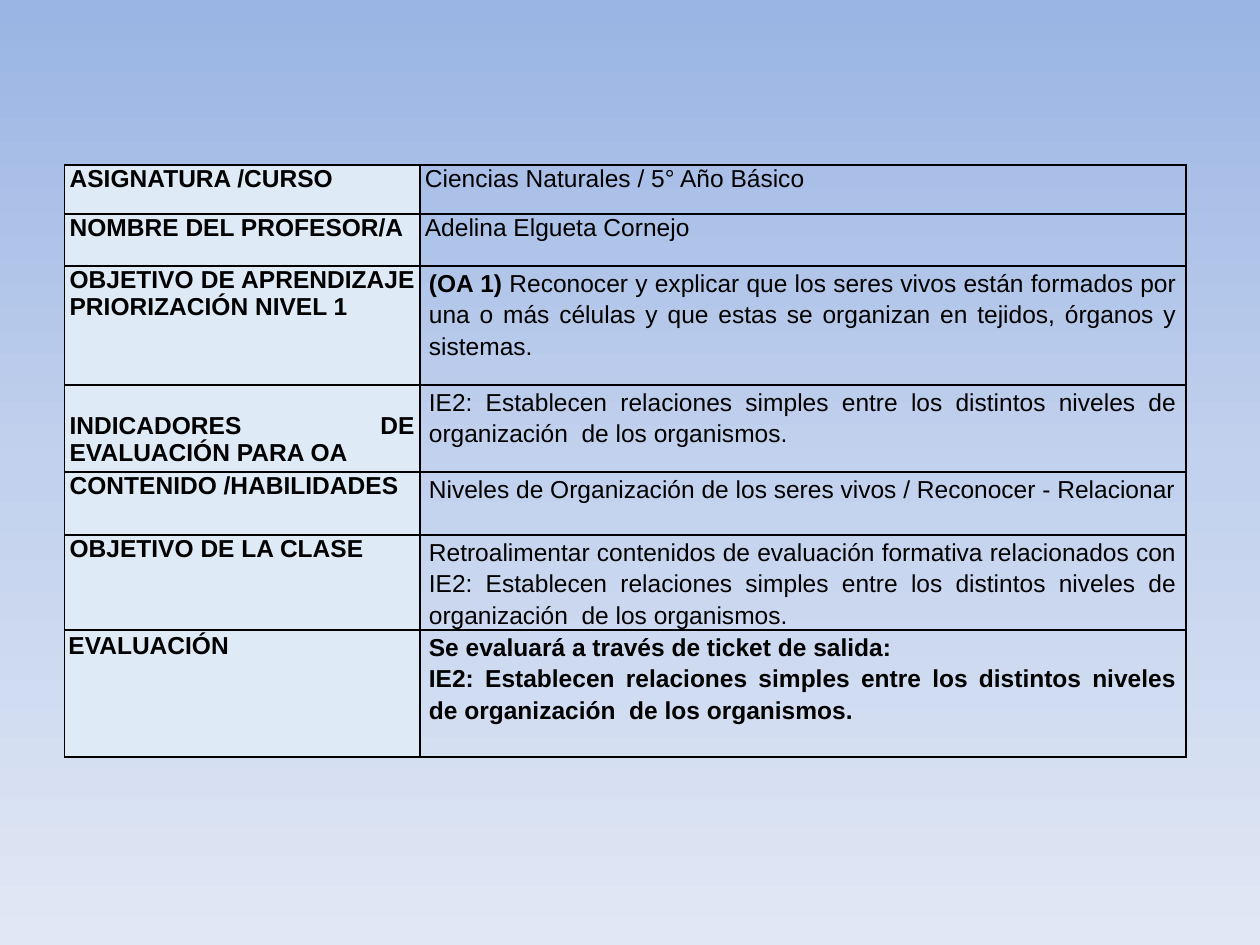
"""Build a slide with the lesson planning table."""
from copy import deepcopy

from lxml.etree import SubElement
from pptx import Presentation
from pptx.dml.color import RGBColor
from pptx.enum.text import PP_ALIGN
from pptx.oxml.ns import qn
from pptx.util import Pt

COLORS = {
    "sky_top": "9AB5E4",
    "sky_middle": "C2D1ED",
    "sky_bottom": "E1E8F5",
    "label": "DEEAF6",
    "ink": "000000",
}
INDICATOR = (
    "IE2: Establecen relaciones simples entre los distintos niveles de "
    "organización  de los organismos."
)
COLUMN_WIDTHS = (203, 437.7)
NARROW = {"side": 2.9}
WIDE = {"side": 5.2, "spacing": 1.15}
ROWS = [
    (28, "ASIGNATURA /CURSO", NARROW,
     [[("Ciencias Naturales / 5° Año Básico", False)]], NARROW),
    (29.7, "NOMBRE DEL PROFESOR/A", NARROW,
     [[("Adelina Elgueta Cornejo", False)]], NARROW),
    (68, "OBJETIVO DE APRENDIZAJE PRIORIZACIÓN NIVEL 1", NARROW,
     [[("(OA 1) ", True),
       ("Reconocer y explicar que los seres vivos están formados por una o más "
        "células y que estas se organizan en tejidos, órganos y sistemas.", False)]], WIDE),
    (49.7, "INDICADORES DE EVALUACIÓN PARA OA", {"side": 2.9, "top": 15.5},
     [[(INDICATOR, False)]], WIDE),
    (36, "CONTENIDO /HABILIDADES", NARROW,
     [[("Niveles de Organización de los seres vivos / Reconocer - Relacionar", False)]], WIDE),
    (54.3, "OBJETIVO DE LA CLASE", NARROW,
     [[("Retroalimentar contenidos de evaluación formativa relacionados con "
        + INDICATOR, False)]], WIDE),
    (72.6, "EVALUACIÓN", {"side": 2.2, "top": 1.6},
     [[("Se evaluará a través de ticket de salida:", True)], [(INDICATOR, True)]], WIDE),
]


class SlideBuilder:
    """Hold the style and the current slide."""

    font_name = "Arial"
    font_size = Pt(14)
    border_width = Pt(1)

    def __init__(self, slide):
        """Keep the slide to draw on."""
        self.slide = slide

    def color(self, name):
        """Return the named colour."""
        return RGBColor.from_string(COLORS[name])

    def add_background(self, names):
        """Fill the background with evenly spaced colours from top to bottom."""
        fill = self.slide.background.fill
        fill.gradient()
        fill.gradient_angle = 270
        stop_list = self.slide.element.find(".//" + qn("a:gsLst"))
        for _ in range(len(names) - len(stop_list)):
            stop_list.append(deepcopy(stop_list[0]))
        for index, (stop, name) in enumerate(zip(fill.gradient_stops, names)):
            stop.position = index / (len(names) - 1)
            stop.color.rgb = self.color(name)

    def add_borders(self, cell):
        """Draw a line on all four sides of a cell."""
        properties = cell._tc.get_or_add_tcPr()
        for side in ("a:lnL", "a:lnR", "a:lnT", "a:lnB"):
            line = SubElement(properties, qn(side), w=str(self.border_width))
            solid = SubElement(line, qn("a:solidFill"))
            SubElement(solid, qn("a:srgbClr"), val=COLORS["ink"])

    def fill_cell(self, cell, paragraphs, side, top=0, spacing=1.0, fill=None):
        """Write justified paragraphs of (text, bold) runs into a cell."""
        self.add_borders(cell)
        if fill:
            cell.fill.solid()
            cell.fill.fore_color.rgb = self.color(fill)
        else:
            cell.fill.background()
        cell.margin_left = cell.margin_right = Pt(side)
        cell.margin_top, cell.margin_bottom = Pt(top), Pt(0)
        text_frame = cell.text_frame
        for index, runs in enumerate(paragraphs):
            paragraph = text_frame.add_paragraph() if index else text_frame.paragraphs[0]
            paragraph.alignment = PP_ALIGN.JUSTIFY
            paragraph.line_spacing = spacing
            for text, bold in runs:
                run = paragraph.add_run()
                run.text = text
                run.font.name, run.font.size = self.font_name, self.font_size
                run.font.bold = bold
                run.font.color.rgb = self.color("ink")

    def add_table(self, left, top, widths, rows):
        """Add a table of labels and their contents."""
        height = sum(row[0] for row in rows)
        table = self.slide.shapes.add_table(
            len(rows), len(widths), Pt(left), Pt(top), Pt(sum(widths)), Pt(height)
        ).table
        table.first_row = table.horz_banding = False
        for column, width in zip(table.columns, widths):
            column.width = Pt(width)
        for index, (row_height, label, label_style, content, content_style) in enumerate(rows):
            table.rows[index].height = Pt(row_height)
            self.fill_cell(table.cell(index, 0), [[(label, True)]], fill="label", **label_style)
            self.fill_cell(table.cell(index, 1), content, **content_style)


def main():
    """Create and save the presentation."""
    presentation = Presentation()
    presentation.slide_width, presentation.slide_height = Pt(720), Pt(540)
    builder = SlideBuilder(presentation.slides.add_slide(presentation.slide_layouts[6]))
    builder.add_background(["sky_top", "sky_middle", "sky_bottom"])
    builder.add_table(36.9, 94.3, COLUMN_WIDTHS, ROWS)
    presentation.save("out.pptx")


if __name__ == "__main__":
    main()
